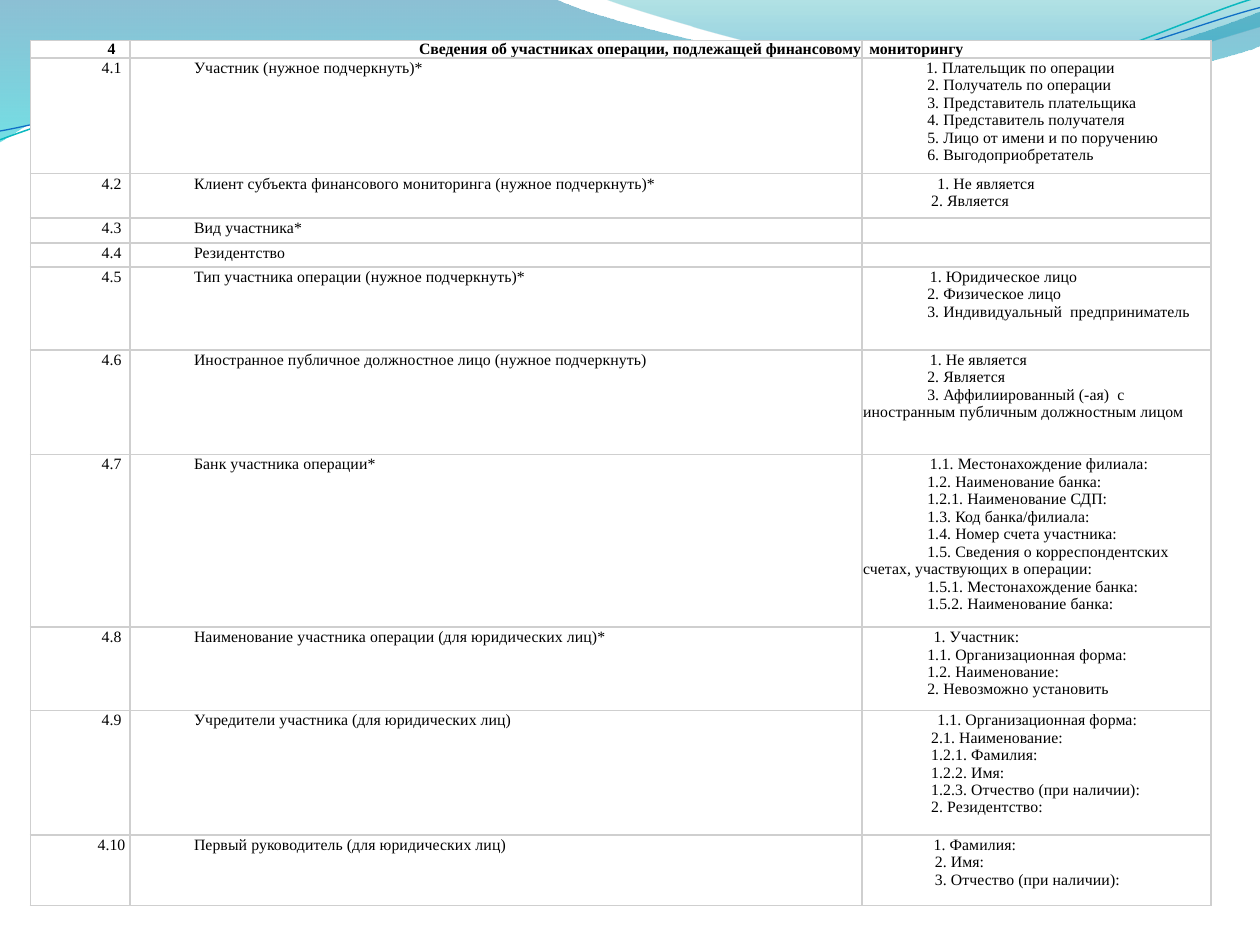
import pptx
import pptx.util
import pptx.dml.color
import pptx.enum.text
import pptx.oxml.ns
import lxml.etree

HUES = {
    "ink": "000000", "paper": "FFFFFF", "rule": "CFCFCF",
    "deep": "0074A1", "aqua": "00C6CF", "teal": "00A1A9", "sky": "008BBF",
    "cyan": "0AB8BF", "blue": "0F6FC6",
}
ALIGN = pptx.enum.text.PP_ALIGN
ANCHOR = pptx.enum.text.MSO_ANCHOR
SPACE = 0.03  # width of one space at body size
INDENT = 0.5
qn = pptx.oxml.ns.qn

# Waves: a start point, then points (lines) or six-number Bezier steps.
LEFT = [(0, 0), (4.4, -0.01), (4.76, 0.17, 6.64, 0.63, 7.58, 0.63),
        (8.53, 0.63, 9.58, 0.26, 10, 0.09), (10.01, 0.36),
        (9.83, 0.44, 8.7, 0.76, 7.46, 0.75),
        (6.22, 0.75, 3.82, 0.28, 2.57, 0.34),
        (1.29, 0.36, 0.46, 0.83, -0.01, 1.13)]
RIGHT = [(4.79, -0.01), (5.09, 0.11, 6.82, 0.62, 7.69, 0.65),
         (8.56, 0.69, 9.61, 0.32, 10, 0.21), (10, 0)]
UPPER = [(0, 1.11), (0.48, 0.93, 1.58, 0.57, 2.77, 0.52),
         (3.95, 0.47, 5.93, 0.89, 7.13, 0.8),
         (8.33, 0.71, 9.38, 0.15, 9.98, -0.02)]
LOWER = [(0, 1.04), (0.47, 0.96, 1.64, 0.61, 2.83, 0.56),
         (4.03, 0.51, 5.97, 0.84, 7.17, 0.75),
         (8.36, 0.67, 9.41, 0.21, 10, 0.06)]

WIDTHS = [0.79, 5.81, 2.77]
HEAD = 0.1
# Row height, label, answers, spaces before the first and the later answers.
ITEMS = [
    (0.92, "Участник (нужное подчеркнуть)*",
     ["1. Плательщик по операции", "2. Получатель по операции",
      "3. Представитель плательщика", "4. Представитель получателя",
      "5. Лицо от имени и по поручению", "6. Выгодоприобретатель"], 0, 0),
    (0.35, "Клиент субъекта финансового мониторинга (нужное подчеркнуть)*",
     ["1. Не является", "2. Является"], 3, 1),
    (0.2, "Вид участника*", [""], 0, 0),
    (0.19, "Резидентство", [""], 0, 0),
    (0.66, "Тип участника операции (нужное подчеркнуть)*",
     ["1. Юридическое лицо", "2. Физическое лицо",
      "3. Индивидуальный  предприниматель"], 1, 0),
    (0.83, "Иностранное публичное должностное лицо (нужное подчеркнуть)",
     ["1. Не является", "2. Является",
      "3. Аффилиированный (-ая)  с иностранным публичным должностным лицом"],
     1, 0),
    (1.37, "Банк участника операции*",
     ["1.1. Местонахождение филиала:", "1.2. Наименование банка:",
      "1.2.1. Наименование СДП:", "1.3. Код банка/филиала:",
      "1.4. Номер счета участника:",
      "1.5. Сведения о корреспондентских счетах, участвующих в операции:",
      "1.5.1. Местонахождение банка:", "1.5.2. Наименование банка:"], 1, 0),
    (0.66, "Наименование участника операции (для юридических лиц)*",
     ["1. Участник:", "1.1. Организационная форма:", "1.2. Наименование:",
      "2. Невозможно установить"], 2, 0),
    (0.99, "Учредители участника (для юридических лиц)",
     ["1.1. Организационная форма:", "2.1. Наименование:",
      "1.2.1. Фамилия:", "1.2.2. Имя:", "1.2.3. Отчество (при наличии):",
      "2. Резидентство:"], 3, 1),
    (0.56, "Первый руководитель (для юридических лиц)",
     ["1. Фамилия:", "2. Имя:", "3. Отчество (при наличии):"], 2, 2),
]


def rgb(hue):
    return pptx.dml.color.RGBColor.from_string(HUES[hue])


def bend(shape, steps):
    """Merge the three lines of each six-number step into one curve."""
    lines = iter(list(shape._element.iter(qn("a:lnTo"))))
    for step in steps[1:]:
        line = next(lines)
        if len(step) == 6:
            line.addprevious(curve := lxml.etree.Element(qn("a:cubicBezTo")))
            for part in (line, next(lines), next(lines)):
                curve.append(part[0])
                part.getparent().remove(part)


def write(frame, lines, dents, align=ALIGN.LEFT, bold=False, track=0,
          face="Times New Roman", size=9):
    """Fill a frame with one paragraph a line, each with its own indent."""
    for i, (line, dent) in enumerate(zip(lines, dents)):
        para = frame.paragraphs[0] if i == 0 else frame.add_paragraph()
        para.alignment = align
        para._p.get_or_add_pPr().set("indent", str(pptx.util.Inches(dent)))
        if not line:
            lxml.etree.SubElement(para._p, qn("a:endParaRPr"),
                                  sz=str(size * 100))
            continue
        run = para.add_run()
        run.text = line
        run.font.name, run.font.size = face, pptx.util.Pt(size)
        run.font.bold = bold
        run.font.color.rgb = rgb("ink")
        if track:
            run._r.get_or_add_rPr().set("spc", str(track))


class Deck:
    """Holds the slide and a grid of 10 columns by 7.5 rows."""
    cols, rows = 10, 7.5
    track = 5

    def __init__(self):
        self.show = pptx.Presentation()
        self.show.slide_width = pptx.util.Inches(10)
        self.show.slide_height = pptx.util.Inches(7.5)
        self.slide = self.show.slides.add_slide(self.show.slide_layouts[6])

    def x(self, n):
        return round(n * self.show.slide_width / self.cols)

    def y(self, n):
        return round(n * self.show.slide_height / self.rows)

    def wave(self, steps, close):
        dots = [(self.x(step[i]), self.y(step[i + 1]))
                for step in steps for i in range(0, len(step), 2)]
        pen = self.slide.shapes.build_freeform(*dots[0], scale=1)
        pen.add_line_segments(dots[1:], close=close)
        shape = pen.convert_to_shape()
        bend(shape, steps)
        shape.shadow.inherit = False
        return shape

    def band(self, steps, stops):
        """Draw a filled wave; stops are (position, hue, opacity)."""
        shape = self.wave(steps, True)
        shape.line.fill.background()
        shape.fill.gradient()
        shape.fill.gradient_angle = 270
        marks = shape._element.iter(qn("a:gs"))
        for stop, mark, (pos, hue, alpha) in zip(
                shape.fill.gradient_stops, marks, stops):
            stop.color.rgb = rgb(hue)
            stop.position = pos / 100
            lxml.etree.SubElement(mark[0], qn("a:alpha"),
                                  val=str(alpha * 1000))

    def line(self, steps, hue, width):
        shape = self.wave(steps, False)
        shape.fill.background()
        shape.line.color.rgb = rgb(hue)
        shape.line.width = pptx.util.Pt(width)

    def table(self, left, top, widths, heights):
        grid = self.slide.shapes.add_table(
            len(heights), len(widths), self.x(left), self.y(top),
            self.x(sum(widths)), self.y(sum(heights))).table
        grid.first_row = grid.horz_banding = False
        for col, width in zip(grid.columns, widths):
            col.width = self.x(width)
        for row, height in zip(grid.rows, heights):
            row.height = self.y(height)
        return grid

    def cell(self, box, lines, dents, anchor=ANCHOR.TOP, inset=0.01, **style):
        """Fill a cell; inset is the margin above and below."""
        box.margin_left = box.margin_right = self.x(0.01)
        box.margin_top = box.margin_bottom = self.y(inset)
        box.vertical_anchor = anchor
        box.fill.solid()
        box.fill.fore_color.rgb = rgb("paper")
        for i, side in enumerate(("a:lnL", "a:lnR", "a:lnT", "a:lnB")):
            edge = lxml.etree.Element(qn(side), w=str(pptx.util.Pt(1)))
            fill = lxml.etree.SubElement(edge, qn("a:solidFill"))
            lxml.etree.SubElement(fill, qn("a:srgbClr"), val=HUES["rule"])
            box._tc.get_or_add_tcPr().insert(i, edge)
        write(box.text_frame, lines, dents, **style)


def main():
    deck = Deck()
    deck.band(LEFT, [(0, "deep", 45), (100, "aqua", 55)])
    deck.band(RIGHT, [(0, "teal", 30), (80, "sky", 45)])
    deck.line(UPPER, "cyan", 0.85)
    deck.line(LOWER, "blue", 0.75)

    grid = deck.table(0.24, 0.32, WIDTHS, [HEAD] + [item[0] for item in ITEMS])
    heads = [
        ("4", INDENT, ALIGN.CENTER),
        ("Сведения об участниках операции, подлежащей финансовому", INDENT,
         ALIGN.RIGHT),
        ("мониторингу", 0.05, ALIGN.LEFT),
    ]
    for i, (text, dent, align) in enumerate(heads):
        deck.cell(grid.cell(0, i), [text], [dent], ANCHOR.BOTTOM, 0,
                  align=align, bold=True)
    for n, (_, label, lines, first, later) in enumerate(ITEMS, 1):
        deck.cell(grid.cell(n, 0), [f"4.{n}"], [INDENT],
                  align=ALIGN.CENTER, track=deck.track)
        deck.cell(grid.cell(n, 1), [label], [INDENT], track=deck.track)
        dents = [INDENT + (SPACE * later + 0.01 if i else SPACE * first)
                 for i in range(len(lines))]
        deck.cell(grid.cell(n, 2), lines, dents, track=deck.track)
    deck.show.save("out.pptx")


if __name__ == "__main__":
    main()
